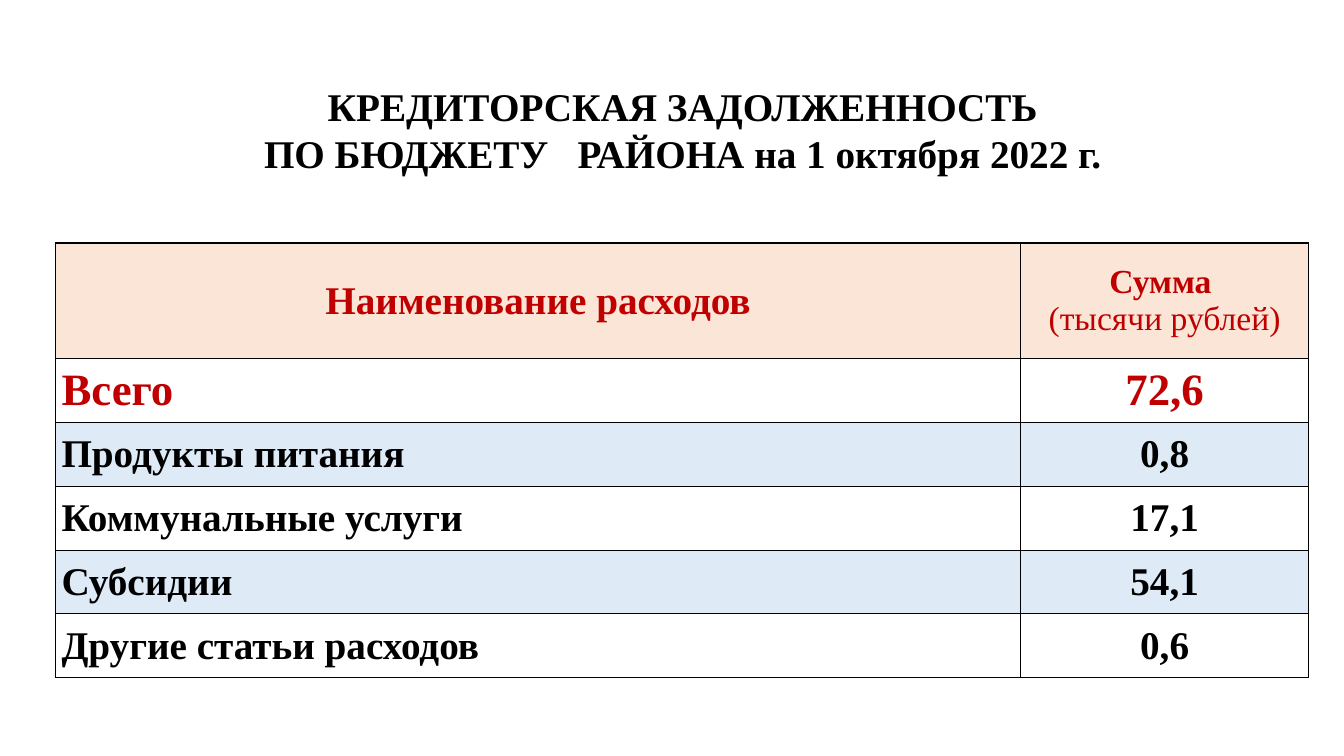
from lxml.etree import SubElement
from pptx import Presentation
from pptx.dml.color import RGBColor
from pptx.enum.text import MSO_ANCHOR as Anchor, PP_ALIGN as Align
from pptx.oxml.ns import qn
from pptx.util import Inches, Pt

COLORS = {
    "black": "000000",
    "red": "C00000",
    "white": "FFFFFF",
    "peach": "FBE5D6",
    "blue": "DEEBF7",
}


class DebtSlide:
    """Style and current slide, with lengths given as percent of the slide."""

    font = "Times New Roman"
    cell_inset = Inches(0.06)

    def __init__(self, presentation):
        self.width = presentation.slide_width
        self.height = presentation.slide_height
        self.slide = presentation.slides.add_slide(presentation.slide_layouts[6])

    def across(self, percent):
        """Return a share of the slide width."""
        return round(self.width * percent / 100)

    def down(self, percent):
        """Return a share of the slide height."""
        return round(self.height * percent / 100)

    def set_text(self, text_frame, text, size, color, align):
        """Fill a text frame with evenly styled bold paragraphs."""
        text_frame.text = text
        for paragraph in text_frame.paragraphs:
            paragraph.alignment = align
            for run in paragraph.runs:
                run.font.name = self.font
                run.font.size = Pt(size)
                run.font.bold = True
                run.font.color.rgb = RGBColor.from_string(COLORS[color])

    def title(self, text, left, top, width, height):
        """Add the centred heading."""
        box = self.slide.shapes.add_textbox(
            self.across(left), self.down(top), self.across(width), self.down(height)
        )
        box.text_frame.word_wrap = True
        self.set_text(box.text_frame, text, 28, "black", Align.CENTER)

    def borders(self, cell):
        """Draw a thin black line on every side of a cell."""
        properties = cell._tc.get_or_add_tcPr()
        for index, side in enumerate(("lnL", "lnR", "lnT", "lnB")):
            line = SubElement(properties, qn(f"a:{side}"), w=str(Pt(1)))
            fill = SubElement(line, qn("a:solidFill"))
            SubElement(fill, qn("a:srgbClr"), val=COLORS["black"])
            properties.insert(index, line)

    def table(self, rows, left, top, column_widths, row_heights):
        """Add a bordered table whose rows hold texts, size, colour and fill."""
        frame = self.slide.shapes.add_table(
            len(rows), len(column_widths), self.across(left), self.down(top),
            self.across(sum(column_widths)), self.down(sum(row_heights)),
        )
        table = frame.table
        for column, width in zip(table.columns, column_widths):
            column.width = self.across(width)
        for row_index, (texts, size, color, fill) in enumerate(rows):
            table.rows[row_index].height = self.down(row_heights[row_index])
            for column_index, text in enumerate(texts):
                cell = table.cell(row_index, column_index)
                cell.margin_left = cell.margin_right = self.cell_inset
                cell.margin_top = cell.margin_bottom = 0
                cell.vertical_anchor = Anchor.MIDDLE
                cell.fill.solid()
                cell.fill.fore_color.rgb = RGBColor.from_string(COLORS[fill])
                self.borders(cell)
                centred = row_index == 0 or column_index > 0
                align = Align.CENTER if centred else Align.LEFT
                self.set_text(cell.text_frame, text, size, color, align)
        return table


def main():
    """Build and save the slide."""
    presentation = Presentation()
    presentation.slide_width = Inches(13.33)
    presentation.slide_height = Inches(7.5)
    debt = DebtSlide(presentation)

    debt.title(
        "КРЕДИТОРСКАЯ ЗАДОЛЖЕННОСТЬ\nПО БЮДЖЕТУ   РАЙОНА на 1 октября 2022 г.",
        12.23, 10.27, 77.12, 13.87,
    )
    rows = [
        (("Наименование расходов", "Сумма \n(тысячи рублей)"), 28, "red", "peach"),
        (("Всего", "72,6"), 32, "red", "white"),
        (("Продукты питания", "0,8"), 28, "black", "blue"),
        (("Коммунальные услуги", "17,1"), 28, "black", "white"),
        (("Субсидии", "54,1"), 28, "black", "blue"),
        (("Другие статьи расходов", "0,6"), 28, "black", "white"),
    ]
    table = debt.table(rows, 4.13, 32.13, [71.8, 21.45], [15.33] + [8.44] * 5)

    amount = table.cell(0, 1).text_frame
    debt.set_text(amount, amount.text, 24, "red", Align.CENTER)
    amount.paragraphs[1].runs[0].font.bold = False

    presentation.save("out.pptx")


if __name__ == "__main__":
    main()
